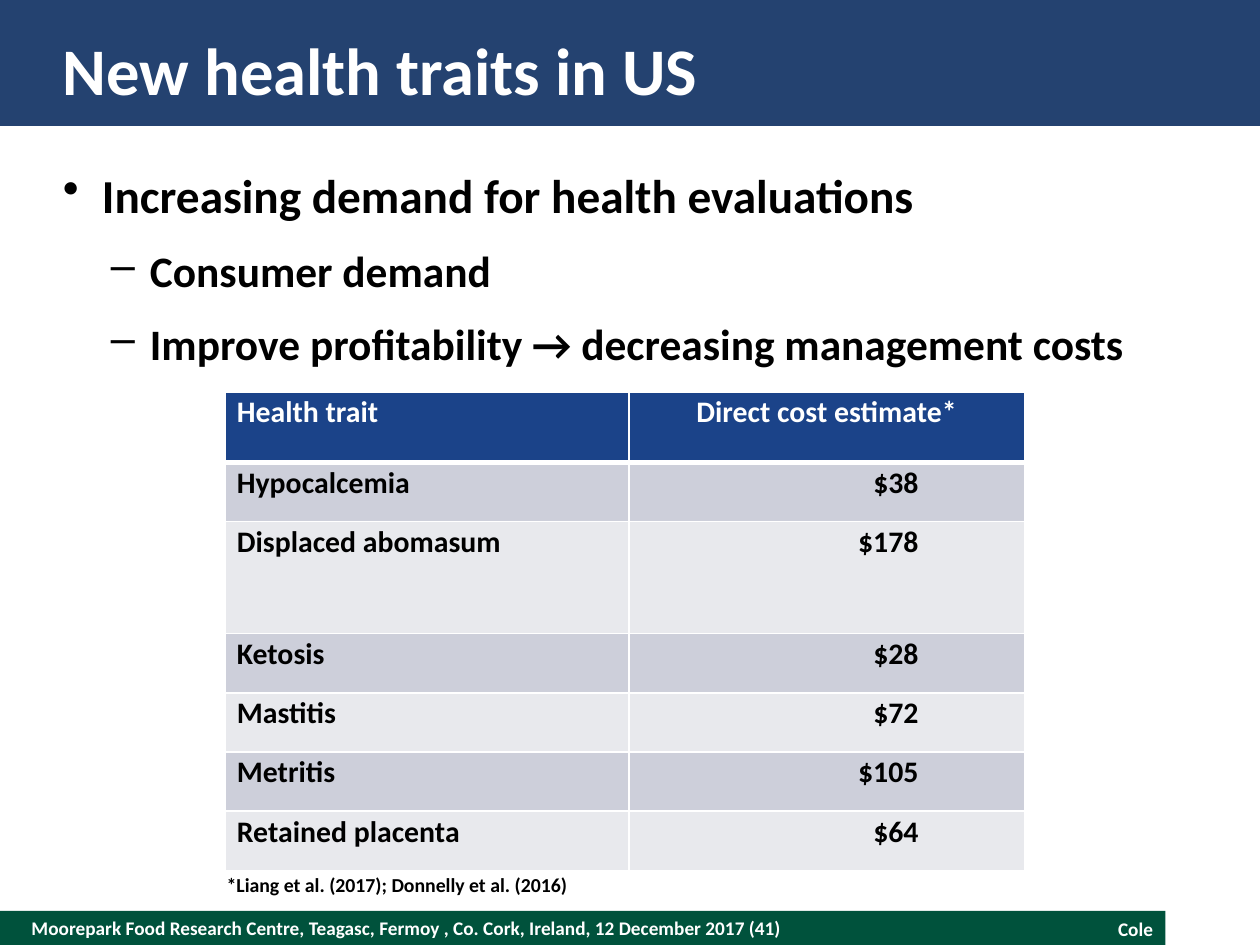
from lxml.etree import SubElement
from pptx import Presentation
from pptx.dml.color import RGBColor
from pptx.enum.shapes import MSO_SHAPE
from pptx.enum.text import MSO_ANCHOR, PP_ALIGN
from pptx.oxml.ns import qn
from pptx.util import Inches, Pt

# Content
TITLE = "New health traits in US"
BULLETS = [
    (0, "Increasing demand for health evaluations"),
    (1, "Consumer demand"),
    (1, "Improve profitability → decreasing management costs"),
]
HEADER = ("Health trait", "Direct cost estimate*")
COSTS = [
    ("Hypocalcemia", "$38"),
    ("Displaced abomasum", "$178"),
    ("Ketosis", "$28"),
    ("Mastitis", "$72"),
    ("Metritis", "$105"),
    ("Retained placenta", "$64"),
]
SOURCES = "*Liang et al. (2017); Donnelly et al. (2016)"
VENUE = "Moorepark Food Research Centre, Teagasc, Fermoy , Co. Cork, Ireland, 12 December 2017 (41)"
SPEAKER = "Cole"

# Format
WHITE, BLACK = "FFFFFF", "000000"
NAVY, GREEN, HEADER_BLUE = "244270", "00523C", "1B4389"
BANDS = ("CDCFDA", "E8E9ED")
LEVELS = [  # bullet, left indent in inches, text size
    ("•", 0.31, 27),
    ("–", 0.69, 24.8),
]
HANGING = 0.31
COLUMN_WIDTHS = (3.2, 3.14)
ROW_HEIGHTS = (0.56, 0.47, 0.89, 0.47, 0.47, 0.47, 0.47)
NO_INSETS = (0, 0, 0, 0)
BOX_INSETS = (0.1, 0.05, 0.1, 0.05)


def color(value):
    return RGBColor.from_string(value)


def write(paragraph, text, size=11, fill=WHITE, align=PP_ALIGN.LEFT):
    paragraph.alignment = align
    run = paragraph.add_run()
    run.text = text
    run.font.name = "Calibri"
    run.font.size = Pt(size)
    run.font.bold = True
    run.font.color.rgb = color(fill)


def set_insets(target, insets):
    left, top, right, bottom = map(Inches, insets)
    target.margin_left, target.margin_top = left, top
    target.margin_right, target.margin_bottom = right, bottom


def add_band(slide, area, fill):
    band = slide.shapes.add_shape(MSO_SHAPE.RECTANGLE, *map(Inches, area))
    band.shadow.inherit = False
    band.fill.solid()
    band.fill.fore_color.rgb = color(fill)
    band.line.fill.background()


def add_frame(slide, area, insets=NO_INSETS, anchor=MSO_ANCHOR.TOP):
    frame = slide.shapes.add_textbox(*map(Inches, area)).text_frame
    frame.word_wrap = True
    frame.vertical_anchor = anchor
    set_insets(frame, insets)
    return frame


def add_bullet(paragraph, level, text):
    mark, indent, size = LEVELS[level]
    properties = paragraph._p.get_or_add_pPr()
    properties.set("marL", str(Inches(indent)))
    properties.set("indent", str(-Inches(HANGING)))
    SubElement(properties, qn("a:buChar")).set("char", mark)
    paragraph.level = level
    paragraph.line_spacing = Pt(30)
    paragraph.space_after = Pt(12)
    write(paragraph, text, size=size, fill=BLACK)


def set_borders(cell, **widths):
    properties = cell._tc.get_or_add_tcPr()
    for side in "LRTB":
        line = SubElement(properties, qn(f"a:ln{side}"), w=str(Pt(widths.get(side, 1))))
        SubElement(SubElement(line, qn("a:solidFill")), qn("a:srgbClr"), val=WHITE)


def add_cost_table(slide):
    rows = [HEADER, *COSTS]
    table = slide.shapes.add_table(
        len(rows), len(HEADER), Inches(1.79), Inches(3.11),
        Inches(sum(COLUMN_WIDTHS)), Inches(sum(ROW_HEIGHTS)),
    ).table
    for column, width in zip(table.columns, COLUMN_WIDTHS):
        column.width = Inches(width)
    for row, height in zip(table.rows, ROW_HEIGHTS):
        row.height = Inches(height)

    for r, values in enumerate(rows):
        is_header = r == 0
        for c, text in enumerate(values):
            cell = table.cell(r, c)
            is_cost = c == 1 and not is_header
            set_insets(cell, (0.09, 0.02, 0.84 if is_cost else 0.09, 0.02))
            # A thick rule separates the header from the costs
            set_borders(cell, T=3 if r == 1 else 1, B=3 if is_header else 1)
            cell.fill.solid()
            cell.fill.fore_color.rgb = color(HEADER_BLUE if is_header else BANDS[(r - 1) % 2])
            if is_cost:
                align = PP_ALIGN.RIGHT
            else:
                align = PP_ALIGN.CENTER if c == 1 else PP_ALIGN.LEFT
            write(cell.text_frame.paragraphs[0], text, size=17,
                  fill=WHITE if is_header else BLACK, align=align)


def main():
    deck = Presentation()
    deck.slide_width, deck.slide_height = Inches(10), Inches(7.5)
    slide = deck.slides.add_slide(deck.slide_layouts[6])

    # Footer and title bands
    add_band(slide, (0, 7.23, 9.25, 0.27), GREEN)
    add_band(slide, (0, 0, 10, 1), NAVY)
    venue = add_frame(slide, (0.25, 7.23, 6.5, 0.27), anchor=MSO_ANCHOR.MIDDLE)
    write(venue.paragraphs[0], VENUE)
    speaker = add_frame(slide, (7.25, 7.23, 2, 0.29), BOX_INSETS)
    write(speaker.paragraphs[0], SPEAKER, align=PP_ALIGN.RIGHT)
    title = add_frame(slide, (0.5, 0.2, 9, 0.7), anchor=MSO_ANCHOR.MIDDLE)
    write(title.paragraphs[0], TITLE, size=38)

    # Bullets
    body = add_frame(slide, (0.5, 1.35, 9, 5.5))
    for i, (level, text) in enumerate(BULLETS):
        add_bullet(body.add_paragraph() if i else body.paragraphs[0], level, text)

    # Cost table and its sources
    sources = add_frame(slide, (1.7, 6.88, 3.02, 0.29), BOX_INSETS)
    write(sources.paragraphs[0], SOURCES, size=11.3, fill=BLACK)
    add_cost_table(slide)

    deck.save("out.pptx")


if __name__ == "__main__":
    main()
